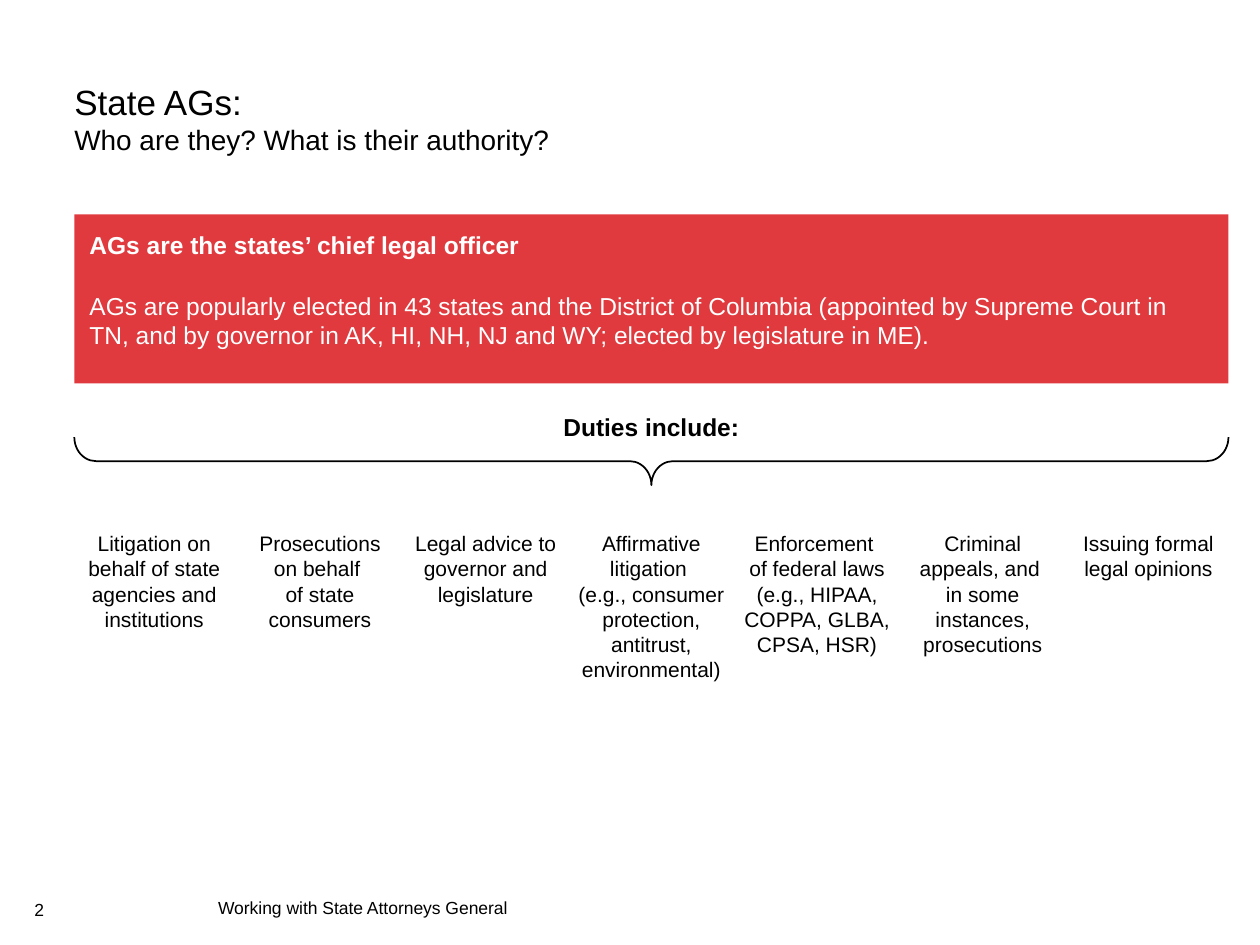
from dataclasses import dataclass

from pptx import Presentation
from pptx.dml.color import RGBColor
from pptx.enum.shapes import MSO_SHAPE as Shape
from pptx.enum.text import MSO_ANCHOR as Anchor, PP_ALIGN as Align
from pptx.util import Pt

FONT = "Arial"
BLACK, WHITE, RED = "000000", "FFFFFF", "E03A3E"
LEFT, WIDTH = 42.5, 659.5
DUTY_WIDTH = 91.4


@dataclass
class Box:
    left: float
    top: float
    width: float
    height: float

    def lengths(self) -> tuple:
        return Pt(self.left), Pt(self.top), Pt(self.width), Pt(self.height)


@dataclass
class Line:
    text: str
    size: float
    color: str = BLACK
    bold: bool = False
    align: Align = Align.LEFT
    before: float = 0


def rgb(color: str) -> RGBColor:
    return RGBColor.from_string(color)


def write(sp, lines: list[Line], anchor=Anchor.TOP, inset_x: float = 0, inset_y: float = 0) -> None:
    tf = sp.text_frame
    tf.word_wrap = True
    tf.vertical_anchor = anchor
    tf.margin_left = tf.margin_right = Pt(inset_x)
    tf.margin_top = tf.margin_bottom = Pt(inset_y)
    for i, line in enumerate(lines):
        p = tf.add_paragraph() if i else tf.paragraphs[0]
        p.text = line.text
        p.alignment = line.align
        p.space_before = Pt(line.before)
        p.font.name = FONT
        p.font.size = Pt(line.size)
        p.font.bold = line.bold
        p.font.color.rgb = rgb(line.color)


def add_text(s, box: Box, lines: list[Line], anchor=Anchor.TOP, inset_x: float = 0) -> None:
    write(s.shapes.add_textbox(*box.lengths()), lines, anchor, inset_x)


def add_banner(s, box: Box, lines: list[Line]) -> None:
    sp = s.shapes.add_shape(Shape.RECTANGLE, *box.lengths())
    sp.shadow.inherit = False
    sp.fill.solid()
    sp.fill.fore_color.rgb = rgb(RED)
    sp.line.fill.background()
    write(sp, lines, inset_x=8.64, inset_y=8.64)


def add_brace(s, box: Box) -> None:
    shift = (box.width - box.height) / 2
    upright = Box(box.left + shift, box.top - shift, box.height, box.width)
    sp = s.shapes.add_shape(Shape.LEFT_BRACE, *upright.lengths())
    sp.rotation = 270
    sp.adjustments[0] = 0.45
    sp.shadow.inherit = False
    sp.fill.background()
    sp.line.color.rgb = rgb(BLACK)
    sp.line.width = Pt(1)


DUTIES = [
    ["Litigation on behalf of state agencies and institutions"],
    ["Prosecutions on behalf \vof state consumers"],
    ["Legal advice to governor and legislature"],
    ["Affirmative litigation ", "(e.g., consumer protection, antitrust, environmental)"],
    ["Enforcement \vof federal laws (e.g., HIPAA, COPPA, GLBA, CPSA, HSR)"],
    ["Criminal appeals, and \vin some instances, prosecutions"],
    ["Issuing formal legal opinions"],
]


def main() -> None:
    prs = Presentation()
    prs.slide_width, prs.slide_height = Pt(720), Pt(540)
    s = prs.slides.add_slide(prs.slide_layouts[6])

    add_text(s, Box(LEFT, 23.8, 635, 65.5), [
        Line("State AGs:", 20),
        Line("Who are they? What is their authority?", 16),
    ], Anchor.BOTTOM)
    add_banner(s, Box(LEFT, 122.6, WIDTH, 96.5), [
        Line("AGs are the states’ chief legal officer", 14, WHITE, bold=True),
        Line("AGs are popularly elected in 43 states and the District of Columbia "
             "(appointed by Supreme Court in TN, and by governor in AK, HI, NH, NJ and WY; "
             "elected by legislature in ME).", 14, WHITE, before=18),
    ])
    add_brace(s, Box(LEFT, 249.8, WIDTH, 27.4))
    add_text(s, Box(270, 235.6, 204.5, 27.4),
             [Line("Duties include:", 14, bold=True, align=Align.CENTER)])

    pitch = (WIDTH - DUTY_WIDTH) / (len(DUTIES) - 1)
    for i, duty in enumerate(DUTIES):
        add_text(s, Box(LEFT + i * pitch, 303.3, DUTY_WIDTH, 100),
                 [Line(text, 12, align=Align.CENTER) for text in duty], inset_x=2.88)

    add_text(s, Box(124.6, 510.5, 422, 14.4),
             [Line("Working with State Attorneys General", 10)], Anchor.BOTTOM)
    add_text(s, Box(0, 511.2, 25.2, 14.4),
             [Line("2", 10, align=Align.RIGHT)], Anchor.BOTTOM)
    prs.save("out.pptx")


if __name__ == "__main__":
    main()
